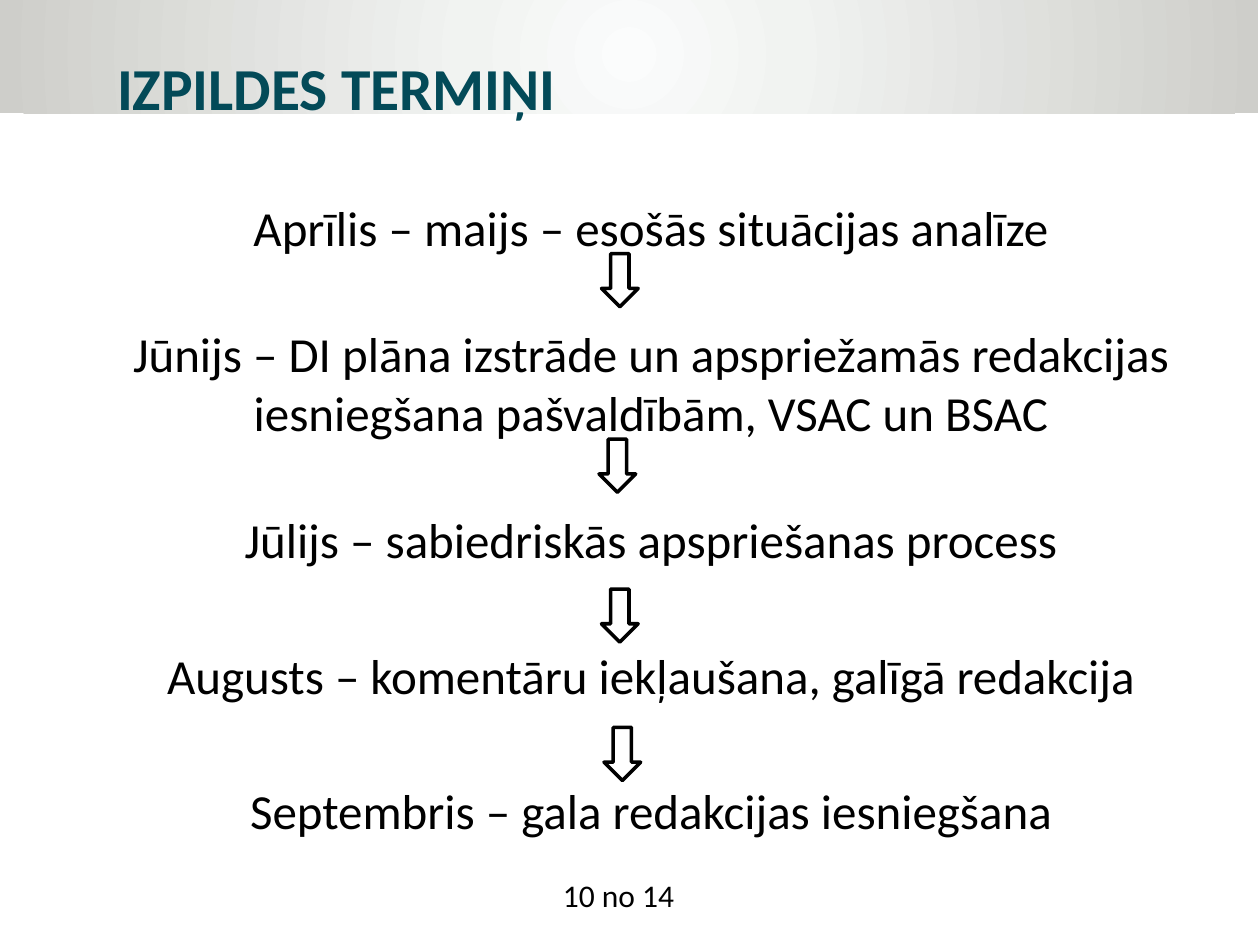
from lxml import etree
from pptx import Presentation
from pptx import util as u
from pptx.dml.color import RGBColor
from pptx.enum import dml, shapes, text
from pptx.oxml import ns

BLACK = RGBColor(0x00, 0x00, 0x00)
WHITE = RGBColor(0xFF, 0xFF, 0xFF)
TEAL = RGBColor(0x03, 0x4A, 0x58)
BAND_STOPS = [
    (0, RGBColor(0xFB, 0xFC, 0xFC)),
    (26, RGBColor(0xF1, 0xF3, 0xF1)),
    (100, RGBColor(0xCE, 0xCE, 0xCA)),
]
FONT = "Calibri"
ARROW_W, ARROW_H = 1.07, 0.74

STEPS = [
    ("Aprīlis – maijs – esošās situācijas analīze", 5.6),
    ("Jūnijs – DI plāna izstrāde un apspriežamās redakcijas "
     "iesniegšana pašvaldībām, VSAC un BSAC", 38.7),
    ("Jūlijs – sabiedriskās apspriešanas process", 38.7),
    ("Augusts – komentāru iekļaušana, galīgā redakcija", 44),
    ("Septembris – gala redakcijas iesniegšana", 44),
]
ARROW_OFFSETS = [(9.85, 1.95), (9.8, 5.69), (9.85, 8.71), (9.9, 11.5)]


def cm_box(box):
    """Turn a box in centimetres into lengths."""
    return [u.Cm(v) for v in box]


def add_run(p, words, size, color, bold=False):
    """Add one styled run to a paragraph."""
    r = p.add_run()
    r.text = words
    r.font.name = FONT
    r.font.size = u.Pt(size)
    r.font.bold = bold
    r.font.color.rgb = color


def add_textbox(s, box, anchor=text.MSO_ANCHOR.TOP):
    """Add an empty wrapping text box and return its text frame."""
    tf = s.shapes.add_textbox(*cm_box(box)).text_frame
    tf.word_wrap = True
    tf.vertical_anchor = anchor
    return tf


def add_band(s, box):
    """Draw the header band with a circular gradient."""
    sp = s.shapes.add_shape(shapes.MSO_SHAPE.RECTANGLE, *cm_box(box))
    sp.shadow.inherit = False
    sp.line.fill.background()
    sp.fill.gradient()
    grad = sp.element.spPr.find(ns.qn("a:gradFill"))
    for child in list(grad):
        grad.remove(child)
    stops = etree.SubElement(grad, ns.qn("a:gsLst"))
    for pos, color in BAND_STOPS:
        gs = etree.SubElement(stops, ns.qn("a:gs"), pos=str(pos * 1000))
        etree.SubElement(gs, ns.qn("a:srgbClr"), val=str(color))
    path = etree.SubElement(grad, ns.qn("a:path"), path="circle")
    etree.SubElement(path, ns.qn("a:fillToRect"),
                     {side: "50000" for side in "ltrb"})


def add_label(s, box, words, size, color, bold=False):
    """Write a single line of text in a box."""
    tf = add_textbox(s, box)
    add_run(tf.paragraphs[0], words, size, color, bold)


def add_arrow(s, left, top):
    """Draw one outlined arrow pointing down."""
    sp = s.shapes.add_shape(shapes.MSO_SHAPE.RIGHT_ARROW,
                            *cm_box((left, top, ARROW_W, ARROW_H)))
    sp.rotation = 90
    sp.shadow.inherit = False
    sp.fill.solid()
    sp.fill.fore_color.rgb = WHITE
    sp.line.color.rgb = BLACK
    sp.line.width = u.Pt(2)
    sp.line.dash_style = dml.MSO_LINE.SOLID
    etree.SubElement(sp.line._get_or_add_ln(), ns.qn("a:round"))


def add_timeline(s, box):
    """Write the centred steps and the arrows between them."""
    tf = add_textbox(s, box, text.MSO_ANCHOR.MIDDLE)
    for i, (words, gap) in enumerate(STEPS):
        p = tf.add_paragraph() if i else tf.paragraphs[0]
        p.alignment = text.PP_ALIGN.CENTER
        p.space_before = u.Pt(gap)
        add_run(p, words, 28, BLACK)
    for dx, dy in ARROW_OFFSETS:
        add_arrow(s, box[0] + dx, box[1] + dy)


def main():
    """Build the schedule slide and save it."""
    prs = Presentation()
    prs.slide_width, prs.slide_height = u.Cm(25.4), u.Cm(19.05)
    s = prs.slides.add_slide(prs.slide_layouts[6])
    add_band(s, (0, -0.08, 25.37, 2.36))
    add_timeline(s, (2.11, 3.33, 22.02, 14.25))
    add_label(s, (2.11, 0.91, 22.02, 1.7), "IZPILDES TERMIŅI", 34, TEAL, True)
    add_label(s, (11.1, 17.53, 4.8, 1.02), "10 no 14", 18, BLACK)
    prs.save("out.pptx")


if __name__ == "__main__":
    main()
